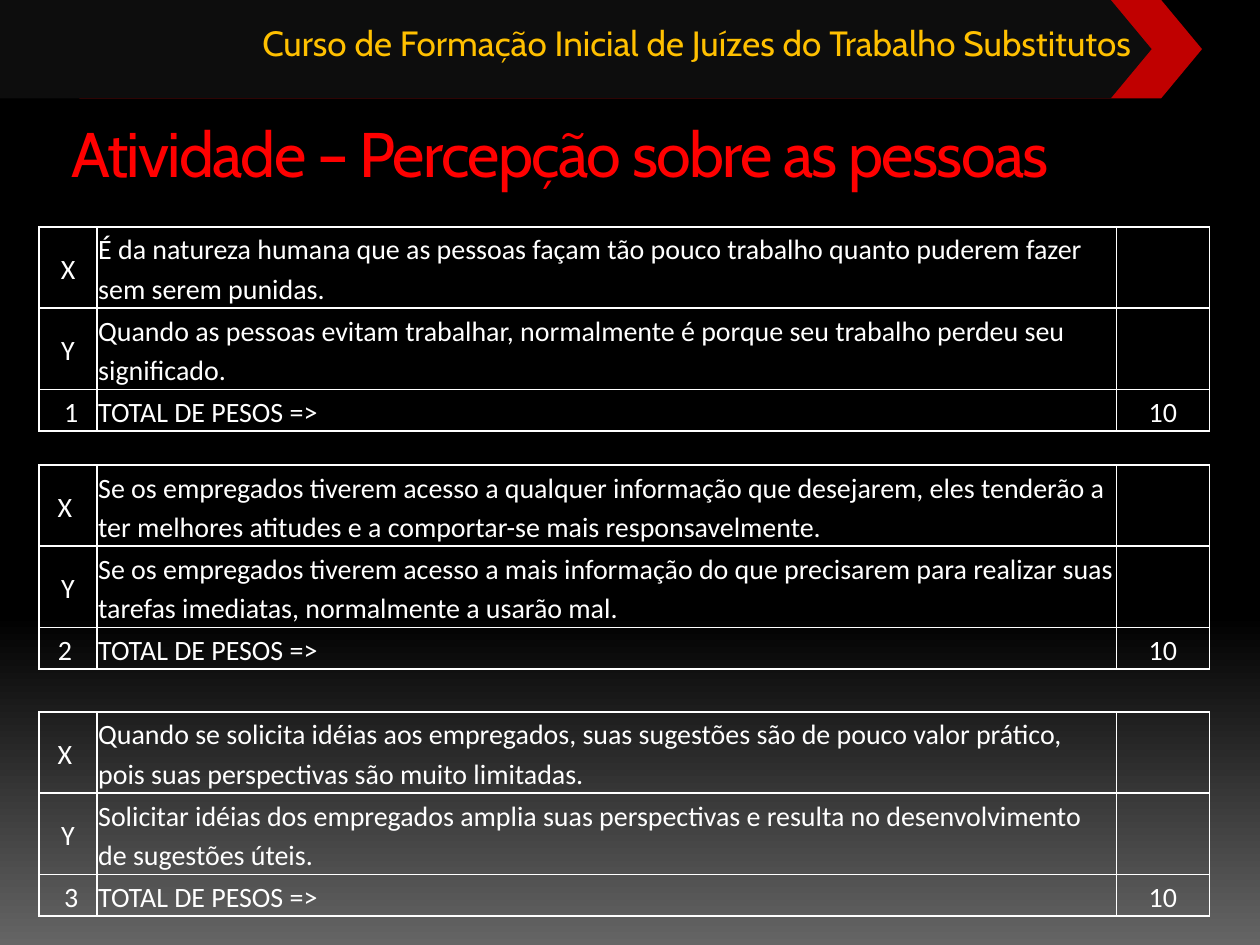
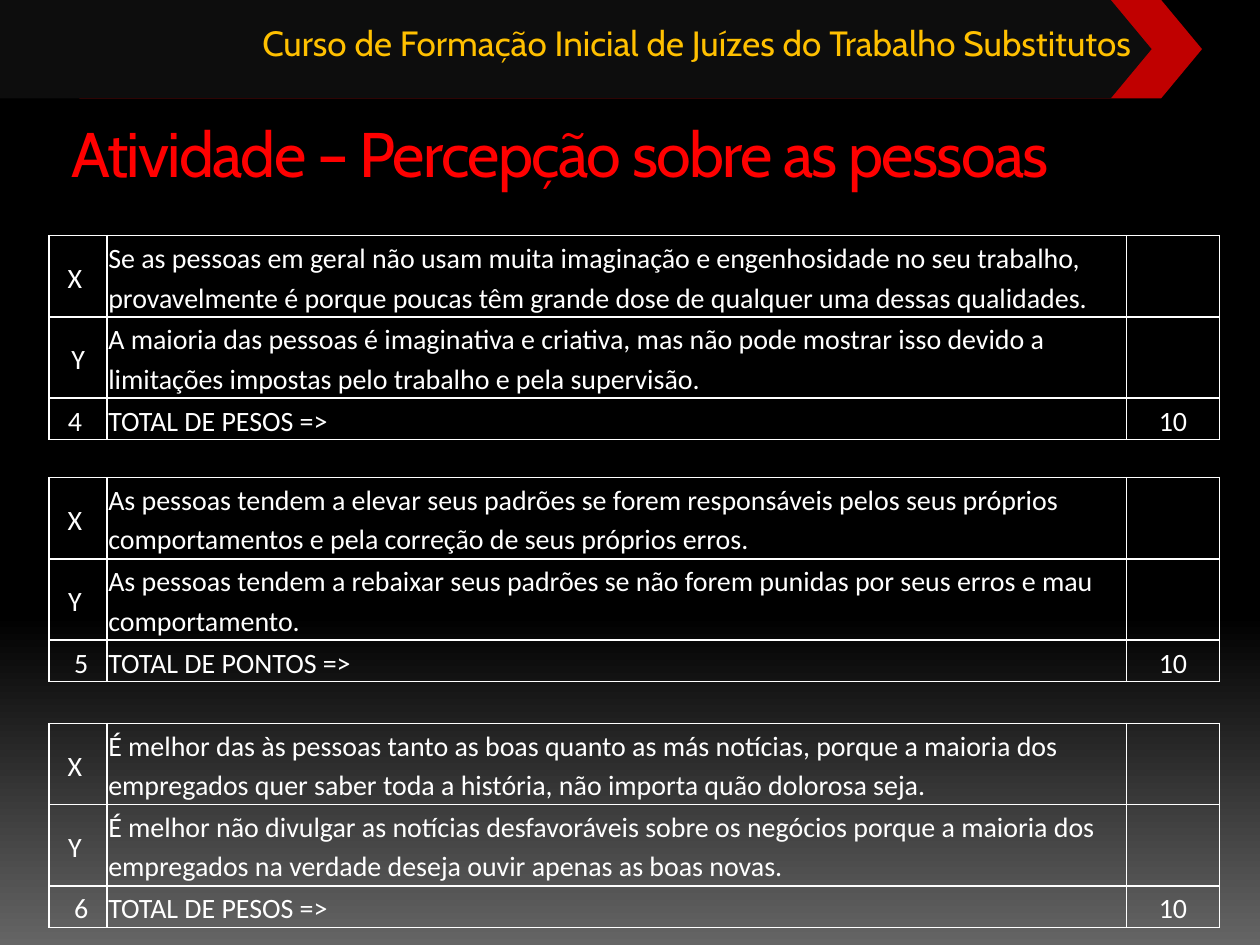
from dataclasses import dataclass

from lxml import etree
from pptx import Presentation
from pptx import util as u
from pptx.dml.color import RGBColor
from pptx.enum import shapes, text
from pptx.oxml import ns


@dataclass(frozen=True)
class Theme:
    black: str = "000000"
    glow: str = "656565"
    band: str = "0D0D0D"
    arrow: str = "C00000"
    title: str = "FF0000"
    course: str = "FFC000"
    ink: str = "FFFFFF"
    heading_font: str = "Cabin"
    table_font: str = "Calibri"
    title_size: int = 36
    course_size: int = 20
    table_size: int = 16


THEME = Theme()
UNIT = u.Inches(0.1)  # the slide is a grid of 100 columns by 75 rows
COLUMNS, ROWS = 100, 75
BAND_HEIGHT = 7.8
TABLE_COLUMNS = (4.6, 8.09 * 10, 7.4)
TABLE_ROWS = (6.45, 6.45, 3.3)

COURSE = "Curso de Formação Inicial de Juízes do Trabalho Substitutos"
TITLE = "Atividade – Percepção sobre as pessoas"
WEIGHTS = "TOTAL DE PESOS =>"
POINTS = "TOTAL DE PONTOS =>"

# Each slide: left column, then per table its top row and (label, statement) lines.
SLIDES = [
    (3.1, [
        (18, [
            ("X", "É da natureza humana que as pessoas façam tão pouco trabalho quanto "
                  "puderem fazer sem serem punidas."),
            ("Y", "Quando as pessoas evitam trabalhar, normalmente é porque seu trabalho "
                  "perdeu seu significado."),
            (" 1", WEIGHTS)]),
        (36.9, [
            ("X ", "Se os empregados tiverem acesso a qualquer informação que desejarem, "
                   "eles tenderão a ter melhores atitudes e a comportar-se mais "
                   "responsavelmente."),
            ("Y", "Se os empregados tiverem acesso a mais informação do que precisarem "
                  "para realizar suas tarefas imediatas, normalmente a usarão mal."),
            ("2 ", WEIGHTS)]),
        (56.5, [
            ("X ", "Quando se solicita idéias aos empregados, suas sugestões são de pouco "
                   "valor prático, pois suas perspectivas são muito limitadas."),
            ("Y", "Solicitar idéias dos empregados amplia suas perspectivas e resulta no "
                  "desenvolvimento de sugestões úteis."),
            (" 3", WEIGHTS)]),
    ]),
    (3.9, [
        (18.7, [
            ("X ", "Se as pessoas em geral não usam muita imaginação e engenhosidade no seu "
                   "trabalho, provavelmente é porque poucas têm grande dose de qualquer "
                   "uma dessas qualidades."),
            ("Y", "A maioria das pessoas é imaginativa e criativa, mas não pode mostrar "
                  "isso devido a limitações impostas pelo trabalho e pela supervisão."),
            ("4 ", WEIGHTS)]),
        (37.9, [
            ("X ", "As pessoas tendem a elevar seus padrões se forem responsáveis pelos "
                   "seus próprios comportamentos e pela correção de seus próprios erros."),
            ("Y ", "As pessoas tendem a rebaixar seus padrões se não forem punidas por "
                   "seus erros e mau comportamento."),
            (" 5", POINTS)]),
        (57.4, [
            ("X ", "É melhor das às pessoas tanto as boas quanto as más notícias, porque a "
                   "maioria dos empregados quer saber toda a história, não importa quão "
                   "dolorosa seja."),
            ("Y ", "É melhor não divulgar as notícias desfavoráveis sobre os negócios "
                   "porque a maioria dos empregados na verdade deseja ouvir apenas as "
                   "boas novas."),
            (" 6", WEIGHTS)]),
    ]),
]


def grid(*cells):
    return [u.Emu(round(cell * UNIT)) for cell in cells]


def style(para, font, size, color, align=text.PP_ALIGN.LEFT):
    para.alignment = align
    para.font.name = font
    para.font.size = u.Pt(size)
    para.font.color.rgb = RGBColor.from_string(color)
    for span in para.runs:
        span.font.name = font
        span.font.size = u.Pt(size)
        span.font.color.rgb = RGBColor.from_string(color)


def set_background(master):
    fill = master.background.fill
    fill.gradient()
    fill.gradient_angle = 270
    stops = ((0.65, THEME.black), (1, THEME.glow))
    for stop, (position, color) in zip(fill.gradient_stops, stops):
        stop.position = position
        stop.color.rgb = RGBColor.from_string(color)


def add_band(slide, left, width, color):
    band = slide.shapes.add_shape(
        shapes.MSO_SHAPE.PENTAGON, *grid(left, 0, width, BAND_HEIGHT))
    band.adjustments[0] = 0.415
    band.shadow.inherit = False
    band.fill.solid()
    band.fill.fore_color.rgb = RGBColor.from_string(color)
    band.line.fill.background()


def add_course_header(slide):
    add_band(slide, 6.3, 89.1, THEME.arrow)
    add_band(slide, 0, 91.4, THEME.band)
    box = slide.shapes.add_textbox(*grid(16.4, 1.2, 73.4, 4.4))
    frame = box.text_frame
    frame.word_wrap = True
    frame.margin_right = 0
    frame.text = COURSE
    style(frame.paragraphs[0], THEME.heading_font, THEME.course_size,
          THEME.course, text.PP_ALIGN.RIGHT)


def set_title(slide):
    title = slide.shapes.title
    title.left, title.top, title.width, title.height = grid(4.7, 8.6, 90.3, 10)
    frame = title.text_frame
    frame.text = TITLE
    frame.vertical_anchor = text.MSO_ANCHOR.TOP
    frame.auto_size = text.MSO_AUTO_SIZE.NONE
    para = frame.paragraphs[0]
    style(para, THEME.heading_font, THEME.title_size, THEME.title)
    para.runs[0].font._element.set("spc", "-100")


def add_borders(cell):
    properties = cell._tc.get_or_add_tcPr()
    for side in ("a:lnL", "a:lnR", "a:lnT", "a:lnB"):
        line = etree.SubElement(properties, ns.qn(side), w=str(u.Pt(1)))
        solid = etree.SubElement(line, ns.qn("a:solidFill"))
        etree.SubElement(solid, ns.qn("a:srgbClr"), val=THEME.ink)


def fill_cell(cell, content, align):
    cell.margin_left = cell.margin_right = u.Inches(0.01)
    cell.margin_top = cell.margin_bottom = u.Inches(0.01)
    cell.vertical_anchor = text.MSO_ANCHOR.MIDDLE
    add_borders(cell)
    cell.fill.background()
    cell.text = content
    para = cell.text_frame.paragraphs[0]
    para.line_spacing = 1.15
    para.space_after = u.Pt(10)
    style(para, THEME.table_font, THEME.table_size, THEME.ink, align)


def add_statement_table(slide, left, top, lines):
    frame = slide.shapes.add_table(
        len(TABLE_ROWS), len(TABLE_COLUMNS),
        *grid(left, top, sum(TABLE_COLUMNS), sum(TABLE_ROWS)))
    table = frame.table
    table.first_row = table.horz_banding = False
    for column, width in zip(table.columns, grid(*TABLE_COLUMNS)):
        column.width = width
    for row, height in zip(table.rows, grid(*TABLE_ROWS)):
        row.height = height
    aligns = (text.PP_ALIGN.CENTER, text.PP_ALIGN.LEFT, text.PP_ALIGN.CENTER)
    for row, line, weight in zip(table.rows, lines, ("", "", "10")):
        for cell, content, align in zip(row.cells, (*line, weight), aligns):
            fill_cell(cell, content, align)


def main():
    deck = Presentation()
    deck.slide_width, deck.slide_height = grid(COLUMNS, ROWS)
    set_background(deck.slide_master)
    title_only = deck.slide_layouts.get_by_name("Title Only")
    for left, tables in SLIDES:
        slide = deck.slides.add_slide(title_only)
        add_course_header(slide)
        set_title(slide)
        for top, lines in tables:
            add_statement_table(slide, left, top, lines)
    deck.save("out.pptx")


if __name__ == "__main__":
    main()
